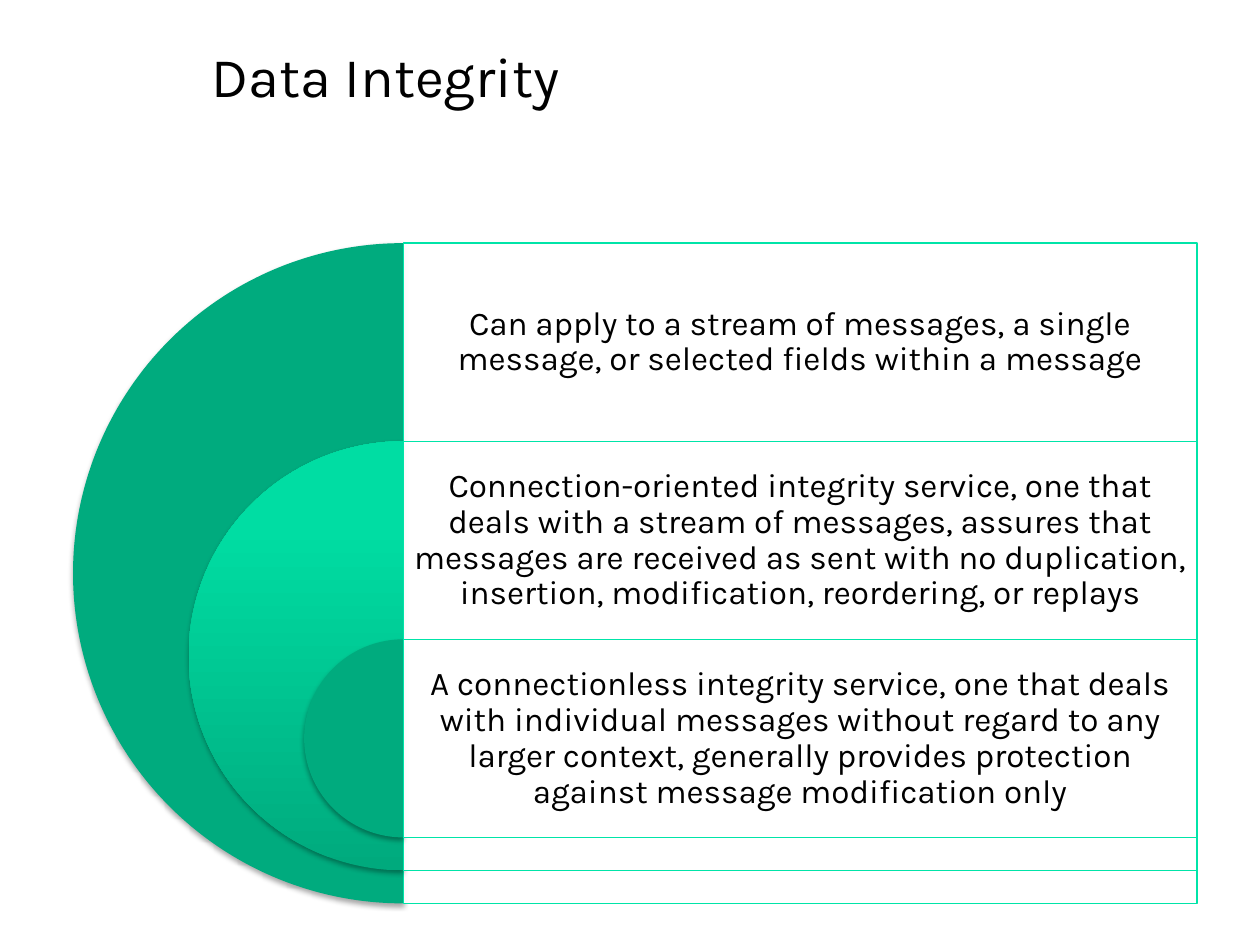
from lxml import etree
from pptx import Presentation
from pptx.dml.color import RGBColor
from pptx.enum.shapes import MSO_SHAPE as Shape
from pptx.enum.text import MSO_ANCHOR as Anchor, PP_ALIGN as Align
from pptx.oxml import parse_xml
from pptx.oxml.ns import nsdecls, qn
from pptx.util import Inches, Pt

COLORS = {
    "text": "000000",
    "panel": "FFFFFF",
    "border": "00E4A8",
    "pie": "00AB7E",
    "shadow": "000000",
}
GRADIENT = {0: "00AA7D", 80: "00DDA3", 100: "00DEA4"}
FONT = "Karla"
AXIS, TOP = 3.2, 1.93
DIAMETER, PANEL_WIDTH = 5.24, 6.3
ROW = 0.3 * DIAMETER
SHRINK = 0.35 * DIAMETER
STATEMENTS = [
    "Can apply to a stream of messages, a single message, or selected fields within a message",
    "Connection-oriented integrity service, one that deals with a stream of messages, assures that "
    "messages are received as sent with no duplication, insertion, modification, reordering, or replays",
    "A connectionless integrity service, one that deals with individual messages without regard to any "
    "larger context, generally provides protection against message modification only",
]


def box(left, top, width, height):
    return [Inches(length) for length in (left, top, width, height)]


def style_text(paragraph, size, align):
    paragraph.alignment = align
    for run in paragraph.runs:
        run.font.name = FONT
        run.font.size = Pt(size)
        run.font.color.rgb = RGBColor.from_string(COLORS["text"])


presentation = Presentation()
presentation.slide_width, presentation.slide_height = Inches(10), Inches(7.5)
slide = presentation.slides.add_slide(presentation.slide_layouts[5])

title = slide.shapes.title
title.left, title.top, title.width, title.height = box(1.58, 0.23, 7.99, 0.68)
title.text_frame.text = "Data Integrity"
title.text_frame.vertical_anchor = Anchor.BOTTOM
style_text(title.text_frame.paragraphs[0], 32, Align.LEFT)

diagram = slide.shapes.add_group_shape().shapes
for level, statement in enumerate(STATEMENTS):
    top = TOP + level * ROW
    diameter = DIAMETER - level * SHRINK

    pie = diagram.add_shape(Shape.PIE, *box(AXIS - diameter / 2, top, diameter, diameter))
    pie.adjustments[0], pie.adjustments[1] = 54, 162
    pie.line.fill.background()
    if level == 1:
        pie.fill.gradient()
        gradient = pie.element.spPr.find(qn("a:gradFill"))
        stops = "".join(
            f'<a:gs pos="{position * 1000}"><a:srgbClr val="{color}"/></a:gs>'
            for position, color in GRADIENT.items()
        )
        gradient.getparent().replace(gradient, parse_xml(
            f'<a:gradFill {nsdecls("a")} rotWithShape="1"><a:gsLst>{stops}</a:gsLst>'
            '<a:lin ang="16200000" scaled="0"/></a:gradFill>'
        ))
    else:
        pie.fill.solid()
        pie.fill.fore_color.rgb = RGBColor.from_string(COLORS["pie"])
    pie.shadow.inherit = False
    pie.element.spPr.find(qn("a:effectLst")).append(parse_xml(
        f'<a:outerShdw {nsdecls("a")} blurRad="{Pt(3.1)}" dist="{Pt(1.8)}" dir="5400000" rotWithShape="0">'
        f'<a:srgbClr val="{COLORS["shadow"]}"><a:alpha val="35000"/></a:srgbClr></a:outerShdw>'
    ))

    panel = diagram.add_shape(Shape.RECTANGLE, *box(AXIS, top, PANEL_WIDTH, diameter))
    panel.shadow.inherit = False
    panel.fill.solid()
    panel.fill.fore_color.rgb = RGBColor.from_string(COLORS["panel"])
    panel_color = panel.element.spPr.find(qn("a:solidFill"))[0]
    etree.SubElement(panel_color, qn("a:alpha"), val="90000")
    panel.line.color.rgb = RGBColor.from_string(COLORS["border"])
    panel.line.width = Pt(0.75)

    text_frame = diagram.add_textbox(*box(AXIS, top, PANEL_WIDTH, ROW)).text_frame
    text_frame.text = statement
    text_frame.word_wrap = True
    text_frame.vertical_anchor = Anchor.MIDDLE
    text_frame.margin_left = text_frame.margin_right = Inches(0.08)
    text_frame.margin_top = text_frame.margin_bottom = Inches(0.08)
    paragraph = text_frame.paragraphs[0]
    paragraph.line_spacing = 0.9
    style_text(paragraph, 19, Align.CENTER)

presentation.save("out.pptx")
